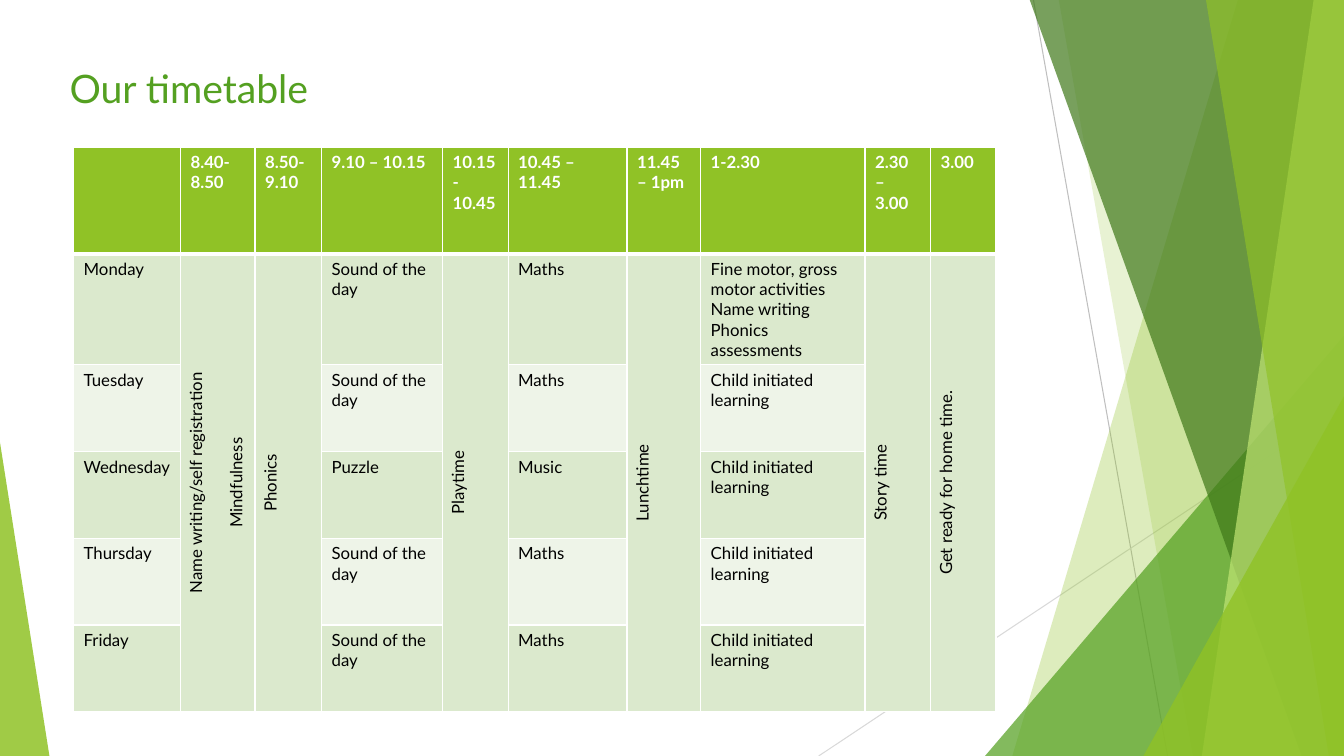
from dataclasses import dataclass

from lxml import etree
from pptx import Presentation
from pptx.dml.color import RGBColor
from pptx.enum.shapes import MSO_CONNECTOR, MSO_SHAPE
from pptx.enum.text import MSO_ANCHOR, MSO_AUTO_SIZE, PP_ALIGN
from pptx.oxml.ns import qn
from pptx.util import Inches, Pt

STRAIGHT = MSO_CONNECTOR.STRAIGHT
TRIANGLE = MSO_SHAPE.ISOSCELES_TRIANGLE
TOP = MSO_ANCHOR.TOP
LEFT, CENTER = PP_ALIGN.LEFT, PP_ALIGN.CENTER
FIT_SHAPE = MSO_AUTO_SIZE.SHAPE_TO_FIT_TEXT


@dataclass(frozen=True)
class Theme:
    font: str = "Lato"
    title_size: float = 28
    table_size: float = 12
    lime: str = "90C226"
    green: str = "54A021"
    forest: str = "3F7819"
    pale_lime: str = "C0E474"
    odd_row: str = "DBE9CD"
    even_row: str = "EEF4E8"
    steep_line: str = "BFBFBF"
    shallow_line: str = "D9D9D9"
    white: str = "FFFFFF"
    black: str = "000000"


THEME = Theme()
SLIDE_WIDTH, SLIDE_HEIGHT = 13.33, 7.5
BAND_TOP = -0.01


@dataclass(frozen=True)
class Line:
    start: tuple[float, float]
    end: tuple[float, float]
    color: str


@dataclass(frozen=True)
class Band:
    top_x: float
    bottom_x: float
    color: str
    opacity: int


@dataclass(frozen=True)
class Wedge:
    left: float
    top: float
    width: float
    apex: float
    color: str
    opacity: int


@dataclass(frozen=True)
class Column:
    width: float
    heading: str
    entries: tuple[str, ...]
    lead: float = 0
    gap: float = 0


LINES = (
    Line((10.25, 0), (11.58, SLIDE_HEIGHT), THEME.steep_line),
    Line((SLIDE_WIDTH, 4.03), (8.12, SLIDE_HEIGHT), THEME.shallow_line),
)
DECORATION = (
    Band(12.28, 10.04, THEME.lime, 30),
    Band(10.5, 11.83, THEME.lime, 20),
    Wedge(9.77, 3.33, 3.56, 1, THEME.green, 72),
    Band(10.21, 12.91, THEME.forest, 70),
    Band(13.03, 11.92, THEME.pale_lime, 70),
    Band(11.96, 13.18, THEME.lime, 65),
    Wedge(11.34, 3.93, 1.99, 1, THEME.lime, 80),
    Wedge(0, 4.39, 0.49, 0, THEME.lime, 85),
)
SOUND, CHILD_LED = "Sound of the day", "Child initiated learning"
COLUMNS = (
    Column(1.06, "", ("Monday", "Tuesday", "Wednesday", "Thursday", "Friday")),
    Column(0.74, "8.40-8.50", ("Name writing/self registration\nMindfulness",), gap=14.4),
    Column(0.66, "8.50-9.10", ("Phonics",)),
    Column(1.2, "9.10 – 10.15", (SOUND, SOUND, "Puzzle", SOUND, SOUND)),
    Column(0.65, "10.15-10.45", ("Playtime",), lead=9.6),
    Column(1.18, "10.45 – 11.45", ("Maths", "Maths", "Music", "Maths", "Maths")),
    Column(0.73, "11.45 – 1pm", ("Lunchtime",)),
    Column(1.63, "1-2.30", (
        "Fine motor, gross motor activities\nName writing\nPhonics assessments",
        *[CHILD_LED] * 4,
    )),
    Column(0.65, "2.30 – 3.00", ("Story time",)),
    Column(0.65, "3.00", ("Get ready for home time.",)),
)
ROW_HEIGHTS = (1.06, *[0.86] * 5)


def write(text_frame, text: str, *, size: float, color: str, bold: bool = False,
          align: PP_ALIGN = LEFT, lead: float = 0, gap: float = 0) -> None:
    for index, line in enumerate(text.split("\n")):
        paragraph = text_frame.add_paragraph() if index else text_frame.paragraphs[0]
        paragraph.alignment = align
        paragraph.space_before = Pt(gap if index else lead)
        run = paragraph.add_run()
        run.text = line
        run.font.name = THEME.font
        run.font.size = Pt(size)
        run.font.bold = bold
        run.font.color.rgb = RGBColor.from_string(color)


def paint(shape, color: str, opacity: int) -> None:
    shape.shadow.inherit = False
    shape.line.fill.background()
    shape.fill.solid()
    shape.fill.fore_color.rgb = RGBColor.from_string(color)
    color_element = shape.fill._xPr.find(qn("a:solidFill"))[0]
    etree.SubElement(color_element, qn("a:alpha"), val=str(opacity * 1000))


def draw_line(slide, line: Line) -> None:
    connector = slide.shapes.add_connector(
        STRAIGHT, *(Inches(value) for value in line.start + line.end))
    connector.line.color.rgb = RGBColor.from_string(line.color)
    connector.line.width = Pt(0.75)
    etree.SubElement(connector._element.spPr, qn("a:effectLst"))


def draw_band(slide, band: Band) -> None:
    corners = [(band.top_x, BAND_TOP), (SLIDE_WIDTH, BAND_TOP),
               (SLIDE_WIDTH, SLIDE_HEIGHT), (band.bottom_x, SLIDE_HEIGHT)]
    points = [(Inches(x), Inches(y)) for x, y in corners]
    builder = slide.shapes.build_freeform(*points[0])
    builder.add_line_segments(points[1:], close=True)
    paint(builder.convert_to_shape(), band.color, band.opacity)


def draw_wedge(slide, wedge: Wedge) -> None:
    shape = slide.shapes.add_shape(
        TRIANGLE, Inches(wedge.left), Inches(wedge.top),
        Inches(wedge.width), Inches(SLIDE_HEIGHT - wedge.top))
    shape.adjustments[0] = wedge.apex
    paint(shape, wedge.color, wedge.opacity)


def format_cell(cell, row: int) -> None:
    properties = cell._tc.get_or_add_tcPr()
    widths = {"L": 1, "R": 1, "T": 3 if row == 1 else 1, "B": 3 if row == 0 else 1}
    for side, width in widths.items():
        border = etree.SubElement(properties, qn(f"a:ln{side}"), w=str(Pt(width)))
        fill = etree.SubElement(border, qn("a:solidFill"))
        etree.SubElement(fill, qn("a:srgbClr"), val=THEME.white)
    color = THEME.lime if row == 0 else THEME.odd_row if row % 2 else THEME.even_row
    cell.fill.solid()
    cell.fill.fore_color.rgb = RGBColor.from_string(color)


def draw_timetable(slide) -> None:
    table = slide.shapes.add_table(
        len(ROW_HEIGHTS), len(COLUMNS), Inches(0.73), Inches(1.46),
        Inches(sum(column.width for column in COLUMNS)), Inches(sum(ROW_HEIGHTS))).table
    table.horz_banding = False
    for row, height in enumerate(ROW_HEIGHTS):
        table.rows[row].height = Inches(height)
    for index, column in enumerate(COLUMNS):
        table.columns[index].width = Inches(column.width)
        for row in range(len(ROW_HEIGHTS)):
            format_cell(table.cell(row, index), row)
        if column.heading:
            write(table.cell(0, index).text_frame, column.heading,
                  size=THEME.table_size, color=THEME.white, bold=True)
        all_week = len(column.entries) == 1
        for row, entry in enumerate(column.entries, start=1):
            cell = table.cell(row, index)
            write(cell.text_frame, entry, size=THEME.table_size, color=THEME.black,
                  align=CENTER if all_week else LEFT, lead=column.lead, gap=column.gap)
            if all_week:
                cell.merge(table.cell(len(ROW_HEIGHTS) - 1, index))
                cell._tc.get_or_add_tcPr().set("vert", "vert270")


def draw_title(slide) -> None:
    title = slide.shapes.title
    title.left, title.top = Inches(0.59), Inches(0.59)
    title.width, title.height = Inches(2.67), Inches(0.57)
    title.text_frame.word_wrap = False
    title.text_frame.auto_size = FIT_SHAPE
    title.text_frame.vertical_anchor = TOP
    write(title.text_frame, "Our timetable", size=THEME.title_size, color=THEME.green)


def main() -> None:
    presentation = Presentation()
    presentation.slide_width = Inches(SLIDE_WIDTH)
    presentation.slide_height = Inches(SLIDE_HEIGHT)
    slide = presentation.slides.add_slide(presentation.slide_layouts[5])
    for line in LINES:
        draw_line(slide, line)
    for item in DECORATION:
        if isinstance(item, Band):
            draw_band(slide, item)
        else:
            draw_wedge(slide, item)
    draw_title(slide)
    draw_timetable(slide)
    presentation.save("out.pptx")


if __name__ == "__main__":
    main()
